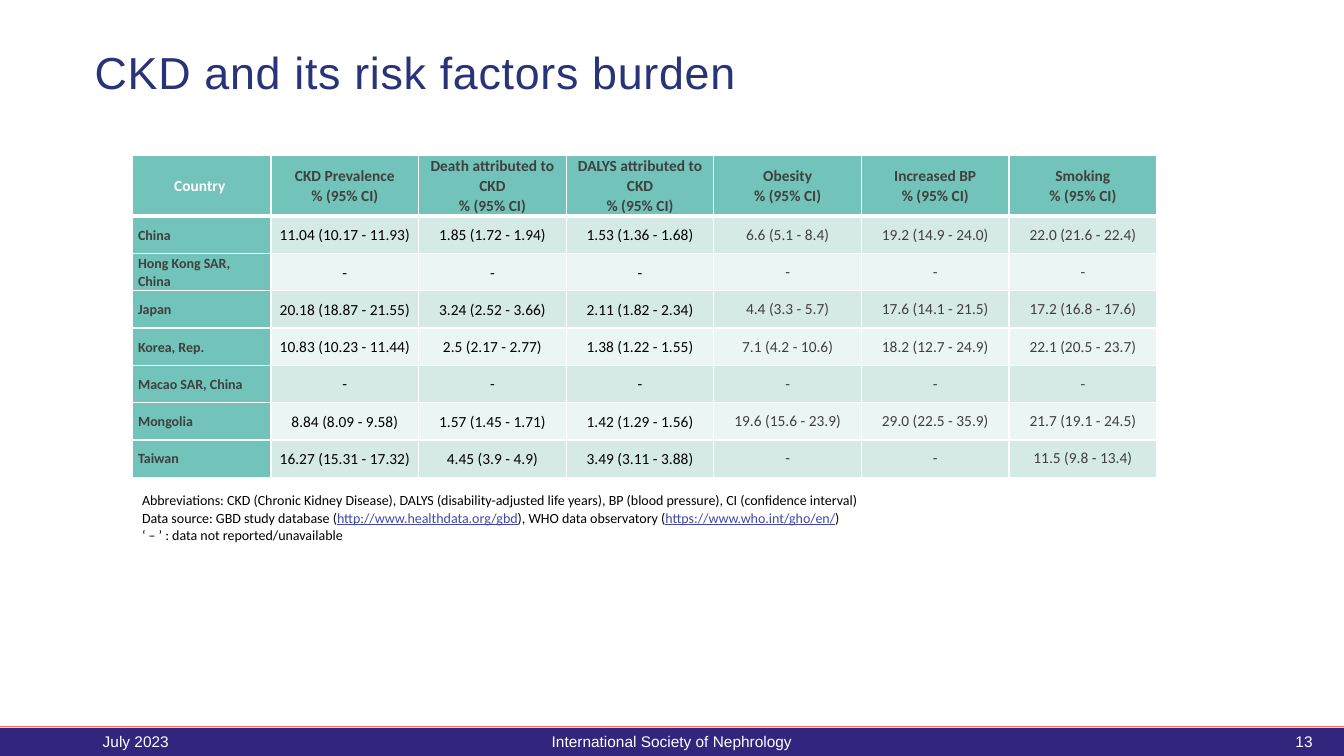
from dataclasses import dataclass

from lxml import etree
from pptx import Presentation
from pptx.dml.color import RGBColor
from pptx.enum.shapes import MSO_CONNECTOR, MSO_SHAPE
from pptx.enum.text import MSO_ANCHOR, MSO_AUTO_SIZE, PP_ALIGN
from pptx.oxml.ns import qn
from pptx.slide import Slide
from pptx.table import _Cell
from pptx.text.text import _Paragraph
from pptx.util import Cm, Pt

LEFT, CENTER, RIGHT = PP_ALIGN.LEFT, PP_ALIGN.CENTER, PP_ALIGN.RIGHT
MIDDLE = MSO_ANCHOR.MIDDLE
RECTANGLE = MSO_SHAPE.RECTANGLE
STRAIGHT = MSO_CONNECTOR.STRAIGHT
NO_AUTOFIT = MSO_AUTO_SIZE.NONE

SLIDE_WIDTH, SLIDE_HEIGHT = 33.87, 19.05
WHITE, BLACK, GREY = "FFFFFF", "000000", "404040"
TEAL, BANDS = "72C3B9", ("D5E9E6", "EBF5F3")
NAVY, TITLE_BLUE, CORAL, LINK_BLUE = "32257E", "283378", "FE7055", "4248A9"


@dataclass(frozen=True)
class TextStyle:
    size: float
    color: str
    font: str = "Calibri"
    bold: bool = False
    underline: bool = False
    spacing: float = 0


@dataclass(frozen=True)
class CellStyle:
    text: TextStyle
    side_inset: float
    top_inset: float = 0
    alignment: PP_ALIGN = CENTER
    line_spacing: float = 1.0


@dataclass(frozen=True)
class FooterItem:
    text: str
    left: float
    width: float
    alignment: PP_ALIGN


CORNER = CellStyle(TextStyle(11, WHITE, bold=True), 0.08, line_spacing=1.07)
HEADER = CellStyle(TextStyle(11, GREY, bold=True), 0.08, line_spacing=1.07)
COUNTRY = CellStyle(TextStyle(10, GREY, bold=True), 0.15, alignment=LEFT, line_spacing=1.07)
BURDEN = CellStyle(TextStyle(11, BLACK), 0.03, 0.03)
RISK = CellStyle(TextStyle(11, GREY), 0)

TITLE = TextStyle(32, TITLE_BLUE, font="Arial", spacing=0.5)
FOOTER = TextStyle(11, WHITE, font="Arial")
NOTE = TextStyle(10, BLACK)
LINK = TextStyle(10, LINK_BLUE, underline=True)

MEASURES = ["CKD Prevalence", "Death attributed to CKD", "DALYS attributed to CKD",
            "Obesity", "Increased BP", "Smoking"]
BURDEN_COLUMNS = 3
COUNTRIES = {
    "China": ["11.04 (10.17 - 11.93)", "1.85 (1.72 - 1.94)", "1.53 (1.36 - 1.68)",
              "6.6 (5.1 - 8.4)", "19.2 (14.9 - 24.0)", "22.0 (21.6 - 22.4)"],
    "Hong Kong SAR, China": ["-"] * 6,
    "Japan": ["20.18 (18.87 - 21.55)", "3.24 (2.52 - 3.66)", "2.11 (1.82 - 2.34)",
              "4.4 (3.3 - 5.7)", "17.6 (14.1 - 21.5)", "17.2 (16.8 - 17.6)"],
    "Korea, Rep.": ["10.83 (10.23 - 11.44)", "2.5 (2.17 - 2.77)", "1.38 (1.22 - 1.55)",
                    "7.1 (4.2 - 10.6)", "18.2 (12.7 - 24.9)", "22.1 (20.5 - 23.7)"],
    "Macao SAR, China": ["-"] * 6,
    "Mongolia": ["8.84 (8.09 - 9.58)", "1.57 (1.45 - 1.71)", "1.42 (1.29 - 1.56)",
                 "19.6 (15.6 - 23.9)", "29.0 (22.5 - 35.9)", "21.7 (19.1 - 24.5)"],
    "Taiwan": ["16.27 (15.31 - 17.32)", "4.45 (3.9 - 4.9)", "3.49 (3.11 - 3.88)",
               "-", "-", "11.5 (9.8 - 13.4)"],
}
NOTES = [
    [("Abbreviations: CKD (Chronic Kidney Disease), DALYS (disability-adjusted life years), "
      "BP (blood pressure), CI (confidence interval)", NOTE)],
    [("Data source: GBD study database (", NOTE), ("http://www.healthdata.org/gbd", LINK),
     ("), WHO data observatory (", NOTE), ("https://www.who.int/gho/en/", LINK), (")", NOTE)],
    [("‘ – ’ : data not reported/unavailable", NOTE)],
]
FOOTER_ITEMS = [
    FooterItem("July 2023", 2.34, 7.62, LEFT),
    FooterItem("International Society of Nephrology", 11.22, 11.43, CENTER),
    FooterItem("13", 23.93, 9.4, RIGHT),
]


def hex_color(value: str) -> RGBColor:
    return RGBColor.from_string(value)


def add_run(paragraph: _Paragraph, text: str, style: TextStyle) -> None:
    run = paragraph.add_run()
    run.text = text
    run.font.name = style.font
    run.font.size = Pt(style.size)
    run.font.bold = style.bold
    run.font.underline = style.underline
    run.font.color.rgb = hex_color(style.color)
    if style.spacing:
        run._r.get_or_add_rPr().set("spc", str(round(style.spacing * 100)))


def add_border(cell: _Cell, side: str, width: float) -> None:
    properties = cell._tc.get_or_add_tcPr()
    line = etree.SubElement(properties, qn(f"a:ln{side}"), w=str(Pt(width)))
    fill = etree.SubElement(line, qn("a:solidFill"))
    etree.SubElement(fill, qn("a:srgbClr"), val=WHITE)


def fill_cell(cell: _Cell, lines: list[str], style: CellStyle, fill: str,
              top_border: float = 1, bottom_border: float = 1) -> None:
    for side, width in (("L", 1), ("R", 1), ("T", top_border), ("B", bottom_border)):
        add_border(cell, side, width)
    cell.fill.solid()
    cell.fill.fore_color.rgb = hex_color(fill)
    cell.vertical_anchor = MIDDLE
    cell.margin_left = cell.margin_right = Cm(style.side_inset)
    cell.margin_top, cell.margin_bottom = Cm(style.top_inset), Cm(0)
    frame = cell.text_frame
    for index, line in enumerate(lines):
        paragraph = frame.add_paragraph() if index else frame.paragraphs[0]
        paragraph.alignment = style.alignment
        paragraph.line_spacing = style.line_spacing
        add_run(paragraph, line, style.text)


def add_burden_table(slide: Slide) -> None:
    row_count, column_count = len(COUNTRIES) + 1, len(MEASURES) + 1
    table = slide.shapes.add_table(row_count, column_count, Cm(3.33), Cm(3.91),
                                   Cm(25.82), Cm(8)).table
    for index, column in enumerate(table.columns):
        column.width = Cm(3.72 if index else 3.5)
    for index, row in enumerate(table.rows):
        row.height = Cm(0.94 if index else 1.42)

    fill_cell(table.cell(0, 0), ["Country "], CORNER, TEAL, bottom_border=3)
    for column, measure in enumerate(MEASURES, start=1):
        fill_cell(table.cell(0, column), [measure, "% (95% CI)"], HEADER, TEAL, bottom_border=3)
    for row, (country, values) in enumerate(COUNTRIES.items(), start=1):
        top_border = 3 if row == 1 else 1
        fill_cell(table.cell(row, 0), [country], COUNTRY, TEAL, top_border)
        for column, value in enumerate(values, start=1):
            style = BURDEN if column <= BURDEN_COLUMNS else RISK
            fill_cell(table.cell(row, column), [value], style, BANDS[(row - 1) % 2], top_border)


def add_title(slide: Slide) -> None:
    title = slide.shapes.title
    title.left, title.top, title.width, title.height = Cm(2.13), Cm(0.99), Cm(23.52), Cm(1.8)
    frame = title.text_frame
    frame.auto_size = NO_AUTOFIT
    frame.vertical_anchor = MIDDLE
    paragraph = frame.paragraphs[0]
    paragraph.alignment = LEFT
    paragraph.line_spacing = 0.9
    add_run(paragraph, "CKD and its risk factors burden", TITLE)


def add_notes_box(slide: Slide) -> None:
    frame = slide.shapes.add_textbox(Cm(3.33), Cm(12.22), Cm(20.96), Cm(1.63)).text_frame
    frame.word_wrap = True
    for index, runs in enumerate(NOTES):
        paragraph = frame.add_paragraph() if index else frame.paragraphs[0]
        paragraph.line_spacing = 1.07
        for text, style in runs:
            add_run(paragraph, text, style)


def add_footer(slide: Slide) -> None:
    bar = slide.shapes.add_shape(RECTANGLE, Cm(0), Cm(18.34), Cm(SLIDE_WIDTH), Cm(0.71))
    bar.shadow.inherit = False
    bar.fill.solid()
    bar.fill.fore_color.rgb = hex_color(NAVY)
    bar.line.fill.background()
    rule = slide.shapes.add_connector(STRAIGHT, Cm(0), Cm(18.31), Cm(SLIDE_WIDTH), Cm(18.31))
    rule.line.color.rgb = hex_color(CORAL)
    rule.line.width = Pt(0.75)
    etree.SubElement(rule._element.spPr, qn("a:effectLst"))
    for item in FOOTER_ITEMS:
        box = slide.shapes.add_textbox(Cm(item.left), Cm(18.16), Cm(item.width), Cm(1.02))
        frame = box.text_frame
        frame.word_wrap = True
        frame.vertical_anchor = MIDDLE
        frame.paragraphs[0].alignment = item.alignment
        add_run(frame.paragraphs[0], item.text, FOOTER)


def main() -> None:
    presentation = Presentation()
    presentation.slide_width, presentation.slide_height = Cm(SLIDE_WIDTH), Cm(SLIDE_HEIGHT)
    slide = presentation.slides.add_slide(presentation.slide_layouts[5])
    add_title(slide)
    add_burden_table(slide)
    add_notes_box(slide)
    add_footer(slide)
    presentation.save("out.pptx")


if __name__ == "__main__":
    main()
